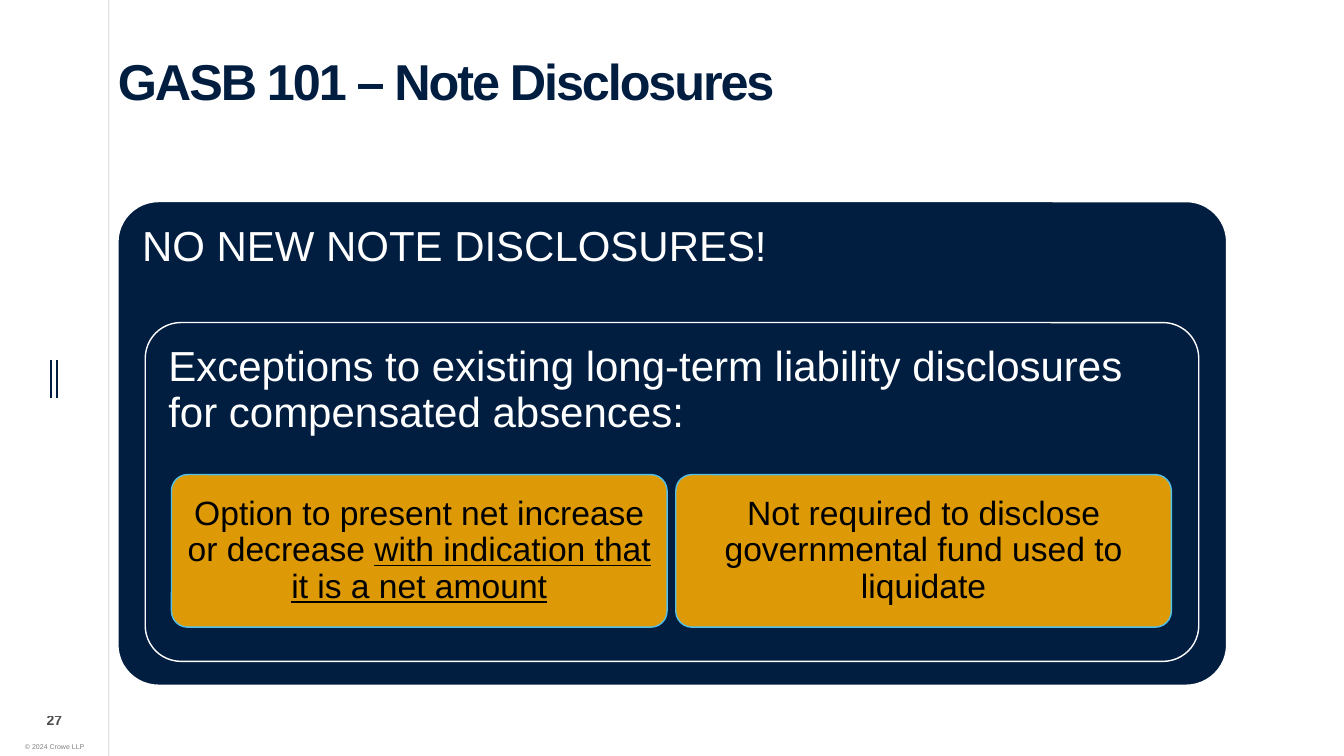
import dataclasses
import typing

import lxml.etree
import pptx
import pptx.dml.color
import pptx.enum.shapes
import pptx.enum.text
import pptx.oxml.ns
import pptx.util

Pt = pptx.util.Pt
ALIGN = pptx.enum.text.PP_ALIGN
ANCHOR = pptx.enum.text.MSO_ANCHOR
COLORS = {
    "navy": "011E41", "white": "FFFFFF", "black": "000000",
    "amber": "F5A800", "sky": "54C0E8", "gray": "808080",
}
CORNER_INSET = 0.29289  # share of the corner radius a rounded rectangle adds to its insets


@dataclasses.dataclass
class Run:
    text: str
    size: float
    color: str
    bold: bool = False
    underline: bool = False
    opacity: int = 100


@dataclasses.dataclass
class Card:
    left: float
    top: float
    width: float
    height: float
    radius: float
    inset: float
    fill: str
    line: str
    runs: list[Run]
    align: typing.Any = ALIGN.LEFT
    anchor: typing.Any = ANCHOR.TOP
    opacity: int = 100


@dataclasses.dataclass
class Rule:
    x: float
    top: float
    bottom: float
    width: float
    color: str
    opacity: int = 100


OPTION_LEFT, OPTION_WIDTH, OPTION_GAP = 122.5, 354, 6.25
OPTIONS = [
    [Run("Option to present net increase or decrease ", 24, "black"),
     Run("with indication that it is a net amount", 24, "black", underline=True)],
    [Run("Not required to disclose governmental fund used to liquidate", 24, "black")],
]
CARDS = [
    Card(84.25, 144, 792, 345.5, 29, 17.25, "navy", "white",
         [Run("NO NEW NOTE DISCLOSURES!", 30, "white")]),
    Card(103.75, 230.4, 752.5, 242, 25.5, 16.5, "navy", "white",
         [Run("Exceptions to existing long-term liability disclosures "
              "for compensated absences:", 30, "white")]),
] + [
    Card(OPTION_LEFT + index * (OPTION_WIDTH + OPTION_GAP), 339, OPTION_WIDTH, 109,
         11.5, 10.8, "amber", "sky", runs, ALIGN.CENTER, ANCHOR.MIDDLE, 90)
    for index, runs in enumerate(OPTIONS)
]
RULES = [
    Rule(36.75, 257, 284.5, 1.5, "navy"),
    Rule(40.5, 257, 284.5, 1.5, "navy"),
    Rule(77.75, 0, 540, 0.5, "black", 20),
]


def apply_format(target: typing.Any, values: dict[str, typing.Any]) -> None:
    for name, value in values.items():
        setattr(target, name, value)


def paint(fill: typing.Any, color: str, opacity: int = 100) -> None:
    """Give a fill a solid colour, with opacity in percent."""
    fill.solid()
    fill.fore_color.rgb = pptx.dml.color.RGBColor.from_string(COLORS[color])
    if opacity < 100:
        element = fill._xPr.find(".//" + pptx.oxml.ns.qn("a:srgbClr"))
        alpha = lxml.etree.SubElement(element, pptx.oxml.ns.qn("a:alpha"))
        alpha.set("val", str(opacity * 1000))


def write_text(frame: typing.Any, runs: list[Run], insets: tuple[float, ...],
               align: typing.Any, anchor: typing.Any, spacing: float = 1.0,
               wrap: bool = True) -> None:
    """Fill one paragraph; insets run left, top, right, bottom."""
    left, top, right, bottom = map(Pt, insets)
    apply_format(frame, {
        "word_wrap": wrap, "auto_size": pptx.enum.text.MSO_AUTO_SIZE.NONE,
        "vertical_anchor": anchor, "margin_left": left, "margin_top": top,
        "margin_right": right, "margin_bottom": bottom,
    })
    paragraph = frame.paragraphs[0]
    apply_format(paragraph, {"alignment": align, "line_spacing": spacing})
    for item in runs:
        run = paragraph.add_run()
        run.text = item.text
        apply_format(run.font, {
            "name": "Arial", "size": Pt(item.size),
            "bold": item.bold, "underline": item.underline,
        })
        paint(run.font.fill, item.color, item.opacity)


def draw_rule(slide: typing.Any, rule: Rule) -> None:
    connector = slide.shapes.add_connector(
        pptx.enum.shapes.MSO_CONNECTOR.STRAIGHT,
        Pt(rule.x), Pt(rule.top), Pt(rule.x), Pt(rule.bottom))
    connector.line.width = Pt(rule.width)
    paint(connector.line.fill, rule.color, rule.opacity)
    lxml.etree.SubElement(connector._element.spPr, pptx.oxml.ns.qn("a:effectLst"))


def draw_card(slide: typing.Any, card: Card) -> None:
    shape = slide.shapes.add_shape(
        pptx.enum.shapes.MSO_SHAPE.ROUNDED_RECTANGLE,
        Pt(card.left), Pt(card.top), Pt(card.width), Pt(card.height))
    shape.adjustments[0] = card.radius / min(card.width, card.height)
    shape.shadow.inherit = False
    paint(shape.fill, card.fill, card.opacity)
    shape.line.width = Pt(1)
    paint(shape.line.fill, card.line)
    inset = card.inset - CORNER_INSET * card.radius
    write_text(shape.text_frame, card.runs, (inset,) * 4, card.align, card.anchor, 0.9)


def draw_title(slide: typing.Any) -> None:
    title = slide.shapes.title
    apply_format(title, {"left": Pt(84.25), "top": Pt(28.8),
                         "width": Pt(792), "height": Pt(108)})
    write_text(title.text_frame, [Run("GASB 101 – Note Disclosures", 36, "navy", bold=True)],
               (0, 15, 0, 0), ALIGN.LEFT, ANCHOR.TOP, 0.8)
    title.text_frame.paragraphs[0].runs[0].font._element.set("spc", "-150")


def draw_label(slide: typing.Any, box: tuple[float, ...], run: Run, wrap: bool) -> None:
    label = slide.shapes.add_textbox(*map(Pt, box))
    write_text(label.text_frame, [run], (0, 0, 0, 0), ALIGN.CENTER, ANCHOR.MIDDLE, wrap=wrap)


def main() -> None:
    presentation = pptx.Presentation()
    apply_format(presentation, {"slide_width": Pt(960), "slide_height": Pt(540)})
    slide = presentation.slides.add_slide(presentation.slide_layouts.get_by_name("Title Only"))
    for rule in RULES:
        draw_rule(slide, rule)
    draw_label(slide, (10, 526.3, 58.3, 13.7), Run("© 2024 Crowe LLP", 5, "gray"), False)
    draw_title(slide)
    for card in CARDS:
        draw_card(slide, card)
    draw_label(slide, (18.7, 505.5, 40.3, 18), Run("27", 10, "black", bold=True, opacity=70), True)
    presentation.save("out.pptx")


if __name__ == "__main__":
    main()
